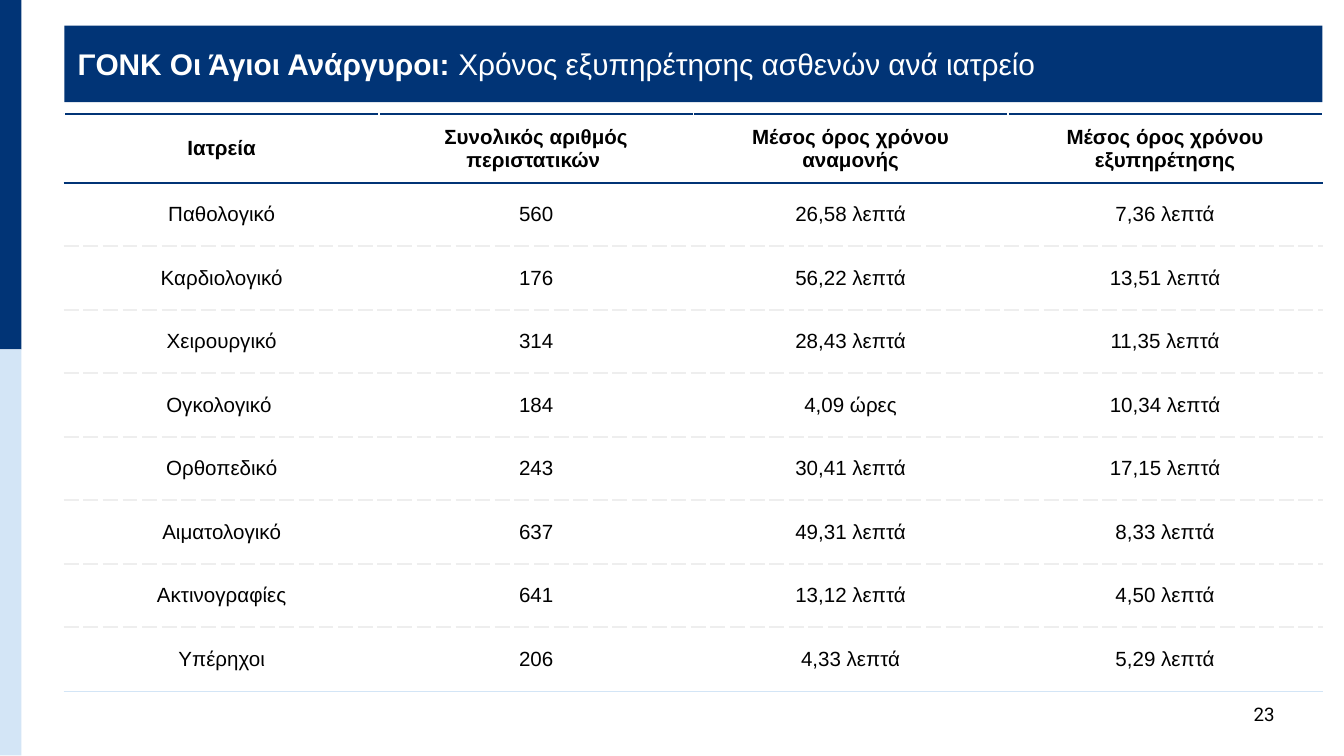
from lxml.etree import SubElement
from pptx import Presentation
from pptx.dml.color import RGBColor
from pptx.enum.shapes import MSO_SHAPE
from pptx.enum.text import MSO_ANCHOR, PP_ALIGN
from pptx.oxml.ns import qn
from pptx.util import Inches, Pt

NAVY, PALE_BLUE, GREY = "013476", "D3E5F6", "EEEEEE"
WHITE, BLACK = "FFFFFF", "000000"

# Border styles: colour, width in points, dash
SIDE_BORDER = (WHITE, 1, "solid")
HEADER_BORDER = (NAVY, 1.5, "solid")
ROW_BORDER = (GREY, 1, "dash")
LAST_BORDER = (PALE_BLUE, 0.25, "solid")

HEADINGS = ["Ιατρεία", "Συνολικός αριθμός περιστατικών ",
            "Μέσος όρος χρόνου αναμονής", "Μέσος όρος χρόνου εξυπηρέτησης"]
CLINICS = [
    ["Παθολογικό", "560", "26,58 λεπτά", "7,36 λεπτά"],
    ["Καρδιολογικό", "176", "56,22 λεπτά", "13,51 λεπτά"],
    ["Χειρουργικό", "314", "28,43 λεπτά", "11,35 λεπτά"],
    ["Ογκολογικό ", "184", "4,09 ώρες", "10,34 λεπτά"],
    ["Ορθοπεδικό", "243", "30,41 λεπτά", "17,15 λεπτά"],
    ["Αιματολογικό", "637", "49,31 λεπτά", "8,33 λεπτά"],
    ["Ακτινογραφίες", "641", "13,12 λεπτά", "4,50 λεπτά"],
    ["Υπέρηχοι", "206", "4,33 λεπτά", "5,29 λεπτά"],
]


def color(hex_string):
    return RGBColor.from_string(hex_string)


class SlideBuilder:
    def __init__(self, slide, font="Arial"):
        self.slide = slide
        self.font = font

    def add_run(self, paragraph, text, size, hex_color, bold=False, font=None):
        run = paragraph.add_run()
        run.text = text
        run.font.name = font or self.font
        run.font.size = Pt(size)
        run.font.bold = bold
        run.font.color.rgb = color(hex_color)

    def set_frame(self, frame):
        frame.word_wrap = True
        frame.vertical_anchor = MSO_ANCHOR.MIDDLE
        frame.margin_left = frame.margin_right = Inches(0.1)
        frame.margin_top = frame.margin_bottom = Inches(0.1)
        paragraph = frame.paragraphs[0]
        paragraph.alignment = PP_ALIGN.LEFT
        return paragraph

    def rectangle(self, left, top, width, height, fill):
        shape = self.slide.shapes.add_shape(
            MSO_SHAPE.RECTANGLE, Inches(left), Inches(top), Inches(width), Inches(height))
        shape.shadow.inherit = False
        shape.fill.solid()
        shape.fill.fore_color.rgb = color(fill)
        shape.line.fill.background()
        return shape

    def title_bar(self, left, top, width, height, label, title):
        shape = self.rectangle(left, top, width, height, NAVY)
        paragraph = self.set_frame(shape.text_frame)
        self.add_run(paragraph, label, 16, WHITE, bold=True)
        self.add_run(paragraph, title, 16, WHITE)

    def page_number(self, left, top, width, height, number):
        box = self.slide.shapes.add_textbox(
            Inches(left), Inches(top), Inches(width), Inches(height))
        paragraph = self.set_frame(box.text_frame)
        self.add_run(paragraph, number, 10, BLACK, font="Roboto")

    def border(self, cell, side, style):
        hex_color, width, dash = style
        properties = cell._tc.get_or_add_tcPr()
        line = SubElement(properties, qn(f"a:ln{side}"), w=str(Pt(width)))
        fill = SubElement(line, qn("a:solidFill"))
        SubElement(fill, qn("a:srgbClr"), val=hex_color)
        SubElement(line, qn("a:prstDash"), val=dash)

    def cell(self, cell, text, bold, top_border, bottom_border):
        cell.vertical_anchor = MSO_ANCHOR.MIDDLE
        cell.margin_left = cell.margin_right = Inches(0.07)
        cell.margin_top = cell.margin_bottom = Inches(0.04)
        # Borders come before the fill in the cell properties
        for side, style in zip("LRTB", (SIDE_BORDER, SIDE_BORDER, top_border, bottom_border)):
            self.border(cell, side, style)
        cell.fill.solid()
        cell.fill.fore_color.rgb = color(WHITE)
        paragraph = cell.text_frame.paragraphs[0]
        paragraph.alignment = PP_ALIGN.CENTER
        self.add_run(paragraph, text, 11, BLACK, bold)

    def table(self, left, top, width, height, header_height, rows):
        table = self.slide.shapes.add_table(
            len(rows), len(rows[0]), Inches(left), Inches(top),
            Inches(width), Inches(height)).table
        table.first_row = table.horz_banding = False
        for column in table.columns:
            column.width = Inches(width / len(rows[0]))
        for row in table.rows:
            row.height = Inches((height - header_height) / (len(rows) - 1))
        table.rows[0].height = Inches(header_height)

        # One border style for each horizontal rule, from top to bottom
        rules = [HEADER_BORDER] * 2 + [ROW_BORDER] * (len(rows) - 2) + [LAST_BORDER]
        for row_index, row in enumerate(rows):
            for column_index, text in enumerate(row):
                self.cell(table.cell(row_index, column_index), text, row_index == 0,
                          rules[row_index], rules[row_index + 1])


def main():
    # Widescreen slide, 16 to 9
    presentation = Presentation()
    presentation.slide_width = Inches(10)
    presentation.slide_height = Inches(10 * 9 / 16)
    builder = SlideBuilder(presentation.slides.add_slide(presentation.slide_layouts[6]))

    # Side band
    builder.rectangle(0, 0, 0.16, 2.6, NAVY)
    builder.rectangle(0, 2.6, 0.16, 3.02, PALE_BLUE)

    # Page number and title
    builder.page_number(9.23, 5.17, 0.57, 0.28, "23")
    builder.title_bar(0.48, 0.19, 9.36, 0.57, "ΓΟΝΚ Οι Άγιοι Ανάργυροι: ",
                      "Χρόνος εξυπηρέτησης ασθενών ανά ιατρείο")

    # Service times by clinic
    builder.table(0.48, 0.85, 9.36, 4.29, 0.51, [HEADINGS] + CLINICS)

    presentation.save("out.pptx")


if __name__ == "__main__":
    main()
